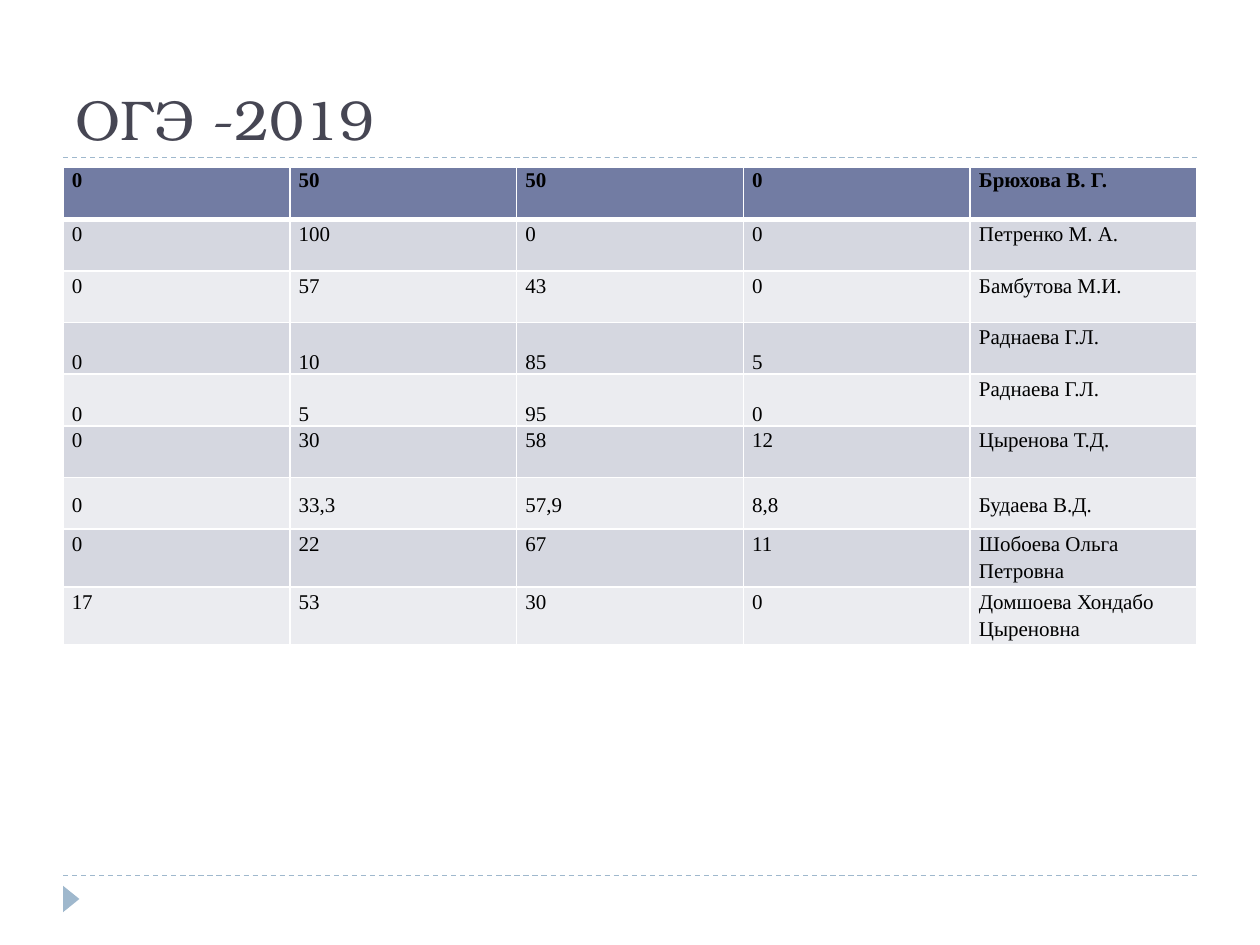
from lxml import etree
from pptx import Presentation
from pptx.dml.color import RGBColor
from pptx.enum.dml import MSO_LINE
from pptx.enum.shapes import MSO_CONNECTOR, MSO_SHAPE
from pptx.enum.text import MSO_ANCHOR
from pptx.oxml.ns import qn
from pptx.util import Inches, Pt

STRAIGHT = MSO_CONNECTOR.STRAIGHT
TRIANGLE = MSO_SHAPE.ISOSCELES_TRIANGLE
DASH = MSO_LINE.DASH
TOP, MIDDLE, BOTTOM = MSO_ANCHOR.TOP, MSO_ANCHOR.MIDDLE, MSO_ANCHOR.BOTTOM

ACCENT = RGBColor(0x9F, 0xB8, 0xCD)
TITLE = RGBColor(0x46, 0x46, 0x53)
BLACK = RGBColor(0, 0, 0)
HEADER = RGBColor(0x72, 0x7C, 0xA3)
BANDS = [RGBColor(0xEB, 0xEC, 0xF0), RGBColor(0xD5, 0xD7, 0xE0)]

# Cell texts, anchor of the numbers, anchor of the name
ROWS = [
    (["0", "50", "50", "0", "Брюхова В. Г."], TOP, TOP),
    (["0", "100", "0", "0", "Петренко М. А."], TOP, TOP),
    (["0", "57", "43", "0", "Бамбутова М.И."], TOP, TOP),
    (["0", "10", "85", "5", "Раднаева Г.Л."], BOTTOM, TOP),
    (["0", "5", "95", "0", "Раднаева Г.Л."], BOTTOM, TOP),
    (["0", "30", "58", "12", "Цыренова Т.Д."], TOP, TOP),
    (["0", "33,3", "57,9", "8,8", "Будаева В.Д."], MIDDLE, MIDDLE),
    (["0", "22", "67", "11", "Шобоева Ольга Петровна"], TOP, TOP),
    (["17", "53", "30", "0", "Домшоева Хондабо Цыреновна"], TOP, TOP),
]


def set_border(cell, side, width):
    ln = etree.SubElement(cell._tc.get_or_add_tcPr(), qn("a:" + side), w=str(Pt(width)))
    fill = etree.SubElement(ln, qn("a:solidFill"))
    etree.SubElement(fill, qn("a:srgbClr"), val="FFFFFF")


prs = Presentation()
prs.slide_width, prs.slide_height = Inches(10), Inches(7.5)
s = prs.slides.add_slide(prs.slide_layouts[6])

# Dashed rules
for y in (6.95, 1.25):
    rule = s.shapes.add_connector(STRAIGHT, Inches(0.5), Inches(y), Inches(9.5), Inches(y))
    rule.line.color.rgb = ACCENT
    rule.line.width = Pt(0.75)
    rule.line.dash_style = DASH
    etree.SubElement(rule._element.spPr, qn("a:effectLst"))

# Footer marker
sp = s.shapes.add_shape(TRIANGLE, Inches(0.46), Inches(7.07), Inches(0.21), Inches(0.13))
sp.rotation = 90
sp.shadow.inherit = False
sp.fill.solid()
sp.fill.fore_color.rgb = ACCENT
sp.line.fill.background()

# Title
tf = s.shapes.add_textbox(Inches(0.5), Inches(0.17), Inches(9), Inches(1.08)).text_frame
tf.word_wrap = True
tf.vertical_anchor = BOTTOM
p = tf.paragraphs[0]
p.text = "ОГЭ -2019"
p.font.name = "TeX Gyre Bonum"
p.font.size = Pt(32)
p.font.color.rgb = TITLE

# Results table
table = s.shapes.add_table(len(ROWS), 5, Inches(0.5), Inches(1.33),
                           Inches(9), Inches(0.41 * len(ROWS))).table
for i, (texts, number_anchor, name_anchor) in enumerate(ROWS):
    table.rows[i].height = Inches(0.41)
    for j, text in enumerate(texts):
        cell = table.cell(i, j)
        cell.margin_left = cell.margin_right = Inches(0.07)
        cell.margin_top = cell.margin_bottom = 0
        cell.vertical_anchor = name_anchor if j == 4 else number_anchor
        for side in ("lnL", "lnR", "lnT", "lnB"):
            heavy = (i, side) in ((0, "lnB"), (1, "lnT"))
            set_border(cell, side, 3 if heavy else 1)
        cell.fill.solid()
        cell.fill.fore_color.rgb = BANDS[i % 2] if i else HEADER
        p = cell.text_frame.paragraphs[0]
        p.text = text
        p.line_spacing = 1.15 if i else 1.07
        p.font.name = "Times New Roman"
        p.font.size = Pt(12)
        p.font.bold = i == 0
        p.font.color.rgb = BLACK

prs.save("out.pptx")
